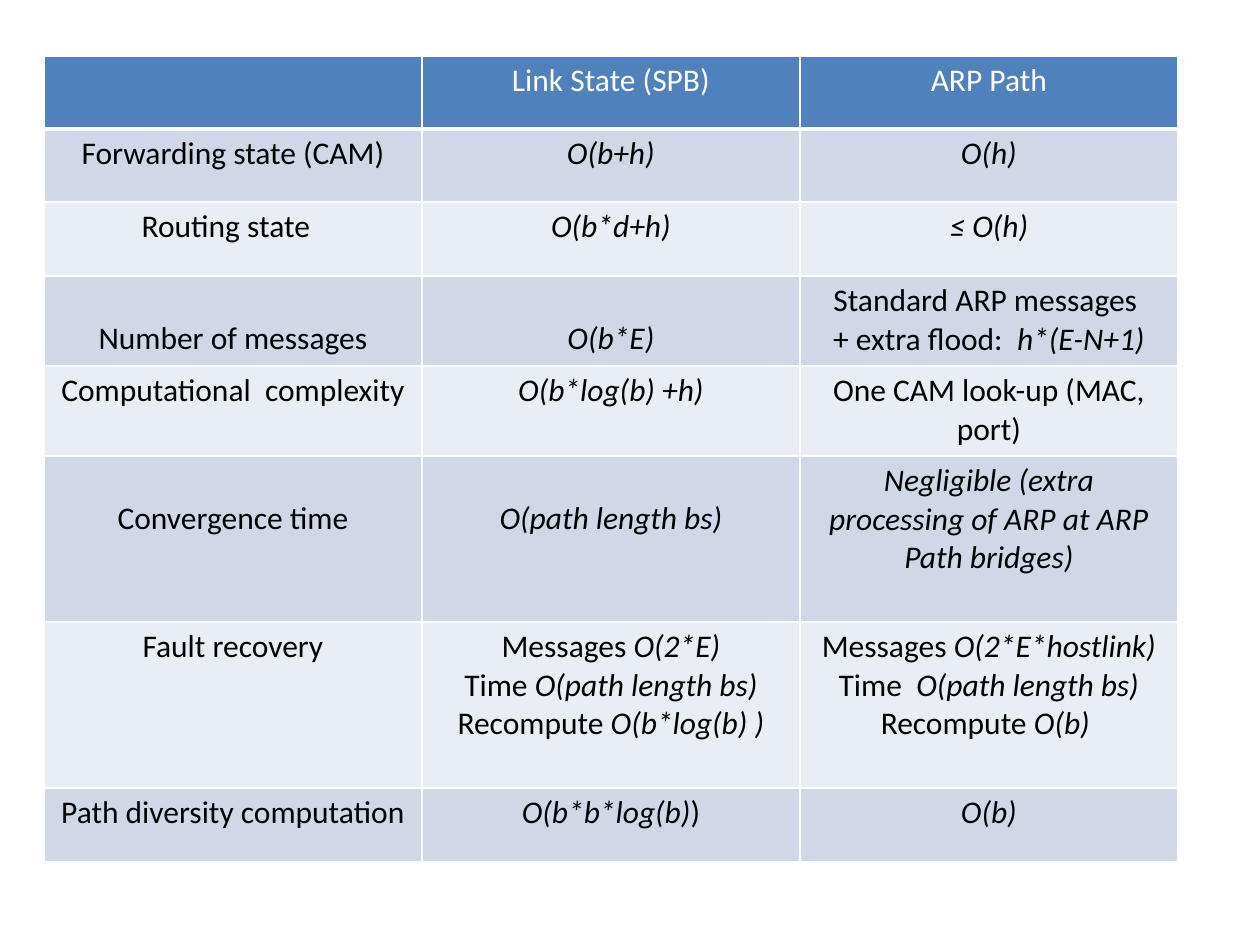
from dataclasses import dataclass

from lxml.etree import SubElement
from pptx import Presentation
from pptx.dml.color import RGBColor
from pptx.enum.text import MSO_ANCHOR, PP_ALIGN
from pptx.oxml.ns import qn
from pptx.util import Emu, Pt

PX = 914400 // 126
COLORS = {
    "header": "4F81BD",
    "odd_row": "D0D8E8",
    "even_row": "E9EDF4",
    "border": "FFFFFF",
    "header_text": "FFFFFF",
    "body_text": "000000",
}
FONT, FONT_SIZE = "Calibri", 18
LEFT, TOP, COLUMN_WIDTH, COLUMN_COUNT = 44, 56, 378, 3
MARGIN_X, MARGIN_Y, LINE_HEIGHT = 13, 6, 38


@dataclass
class ComparisonRow:
    height: int
    cells: tuple[str, str, str]
    lowered: bool = False  # the first two cells start one line lower


# Text between bars is italic; a newline starts a new paragraph
ROWS = [
    ComparisonRow(73, ("", "Link State (SPB)", "ARP Path")),
    ComparisonRow(73, ("Forwarding state (CAM)", "| O(b+h) |", "|O(h)|")),
    ComparisonRow(74, ("Routing state  ", "|O(b*d+h)|", "|≤ O(h)|")),
    ComparisonRow(90, (
        "Number of messages",
        "|O(b*E)|",
        "Standard ARP messages \n+ extra flood:  |h*(E-N+1)|",
    ), lowered=True),
    ComparisonRow(90, (
        "Computational  complexity",
        "|O(b*log(b) +h)|",
        "One CAM look-up (MAC, port)",
    )),
    ComparisonRow(166, (
        "Convergence time",
        "|O(path length bs)|",
        "|Negligible (extra processing of ARP at ARP Path bridges)|",
    ), lowered=True),
    ComparisonRow(166, (
        "Fault recovery",
        "Messages |O(2*E)|\nTime |O(path length bs)|\nRecompute| O(b*log(b) )|",
        "Messages |O(2*E*hostlink)|\nTime  |O(path length bs)|\nRecompute |O(b) |",
    )),
    ComparisonRow(74, ("Path diversity computation", "|O(b*b*log(b)|)", "|O(b)|")),
]


def px(length: int) -> Emu:
    return Emu(length * PX)


def rgb(name: str) -> RGBColor:
    return RGBColor.from_string(COLORS[name])


def set_borders(cell, bottom_width: int) -> None:
    """Draw the four cell borders, which must precede the fill in the XML."""
    properties = cell._tc.get_or_add_tcPr()
    widths = {"a:lnL": 1, "a:lnR": 1, "a:lnT": 1, "a:lnB": bottom_width}
    for index, (tag, width) in enumerate(widths.items()):
        line = SubElement(properties, qn(tag), w=str(Pt(width)))
        fill = SubElement(line, qn("a:solidFill"))
        SubElement(fill, qn("a:srgbClr"), val=COLORS["border"])
        properties.insert(index, line)


def write_cell(cell, text: str, color: str) -> None:
    text_frame = cell.text_frame
    text_frame.word_wrap = True
    text_frame.text = text.replace("|", "")
    for paragraph, line in zip(text_frame.paragraphs, text.split("\n")):
        paragraph.text = ""
        paragraph.alignment = PP_ALIGN.CENTER
        paragraph.font.size = Pt(FONT_SIZE)
        for index, part in enumerate(line.split("|")):
            if not part:
                continue
            run = paragraph.add_run()
            run.text = part
            run.font.name = FONT
            run.font.size = Pt(FONT_SIZE)
            run.font.bold = False
            run.font.italic = index % 2 == 1
            run.font.color.rgb = rgb(color)


def add_comparison_table(slide, rows: list[ComparisonRow]) -> None:
    table = slide.shapes.add_table(
        len(rows), COLUMN_COUNT, px(LEFT), px(TOP),
        px(COLUMN_WIDTH * COLUMN_COUNT), px(sum(row.height for row in rows)),
    ).table
    for column in table.columns:
        column.width = px(COLUMN_WIDTH)

    for row_index, row in enumerate(rows):
        is_header = row_index == 0
        fill = "header" if is_header else ("even_row", "odd_row")[row_index % 2]
        table.rows[row_index].height = px(row.height)
        for column_index, text in enumerate(row.cells):
            cell = table.cell(row_index, column_index)
            drop = LINE_HEIGHT if row.lowered and column_index < 2 else 0
            cell.margin_left = cell.margin_right = px(MARGIN_X)
            cell.margin_top = px(MARGIN_Y + drop)
            cell.margin_bottom = px(MARGIN_Y)
            cell.vertical_anchor = MSO_ANCHOR.TOP
            cell.fill.solid()
            cell.fill.fore_color.rgb = rgb(fill)
            set_borders(cell, 3 if is_header else 1)
            write_cell(cell, text, "header_text" if is_header else "body_text")


def main() -> None:
    presentation = Presentation()
    presentation.slide_width = px(1260)
    presentation.slide_height = px(945)
    # Blank layout: the slide holds only the table
    slide = presentation.slides.add_slide(presentation.slide_layouts[6])
    add_comparison_table(slide, ROWS)
    presentation.save("out.pptx")


if __name__ == "__main__":
    main()
